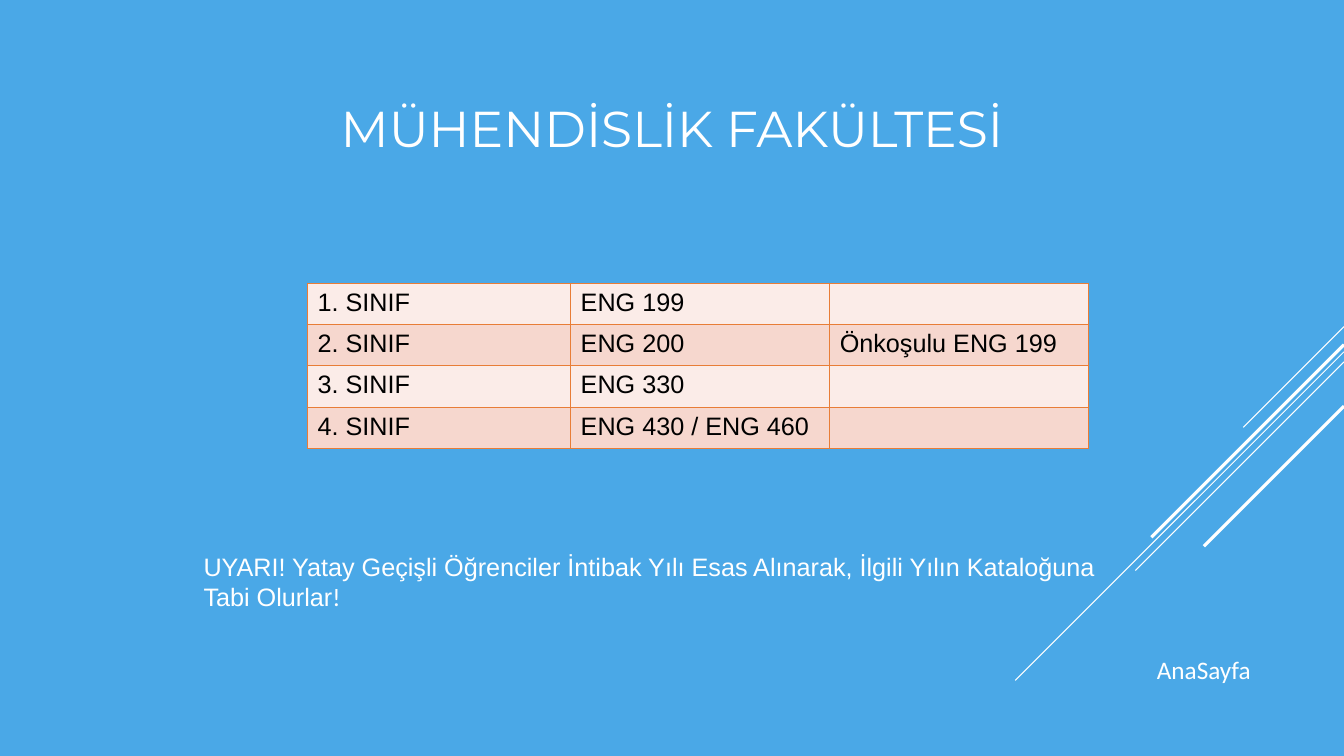
from lxml import etree
from pptx import Presentation
from pptx.dml.color import RGBColor
from pptx.enum import shapes, text
from pptx.oxml import ns
from pptx.util import Inches, Pt

BLUE = RGBColor(0x4A, 0xA8, 0xE7)
WHITE = RGBColor(0xFF, 0xFF, 0xFF)
BLACK = RGBColor(0x00, 0x00, 0x00)
ORANGE = RGBColor(0xE8, 0x7D, 0x37)
ROW_FILLS = (RGBColor(0xFB, 0xEC, 0xE8), RGBColor(0xF6, 0xD7, 0xCE))

RIGHT_EDGE = 13.33
DIAGONALS = (
    (3.24, 1.0, 0.75),
    (3.49, 3.26, 0.75),
    (3.59, 2.07, 0.75),
    (3.42, 1.91, 2.25),
    (4.03, 1.39, 2.25),
)
COURSES = (
    ("1. SINIF", "ENG 199", ""),
    ("2. SINIF", "ENG 200", "Önkoşulu ENG 199"),
    ("3. SINIF", "ENG 330", ""),
    ("4. SINIF", "ENG 430 / ENG 460", ""),
)
COLUMN_WIDTHS = (2.61, 2.57, 2.57)
ROW_HEIGHT = 0.41


def write(paragraph, content, font="Arial", size=18, color=WHITE, align=None):
    paragraph.alignment = align
    target = paragraph.add_run() if content else paragraph
    if content:
        target.text = content
    target.font.name = font
    target.font.size = Pt(size)
    target.font.color.rgb = color


def add_borders(cell, color, width):
    properties = cell._tc.get_or_add_tcPr()
    for side in ("lnL", "lnR", "lnT", "lnB"):
        line = etree.SubElement(properties, ns.qn(f"a:{side}"), w=str(Pt(width)))
        fill = etree.SubElement(line, ns.qn("a:solidFill"))
        etree.SubElement(fill, ns.qn("a:srgbClr"), val=str(color))


class SlideBuilder:
    def __init__(self, slide, background):
        self.slide = slide
        slide.background.fill.solid()
        slide.background.fill.fore_color.rgb = background

    def diagonal(self, top, reach, width):
        connector = self.slide.shapes.add_connector(
            shapes.MSO_CONNECTOR.STRAIGHT,
            Inches(RIGHT_EDGE), Inches(top),
            Inches(RIGHT_EDGE - reach), Inches(top + reach),
        )
        connector.line.color.rgb = WHITE
        connector.line.width = Pt(width)
        etree.SubElement(connector._element.spPr, ns.qn("a:effectLst"))

    def text_box(self, left, top, width, height, anchor=text.MSO_ANCHOR.TOP):
        box = self.slide.shapes.add_textbox(
            Inches(left), Inches(top), Inches(width), Inches(height)
        )
        box.text_frame.word_wrap = True
        box.text_frame.vertical_anchor = anchor
        return box.text_frame.paragraphs[0]

    def table(self, left, top, rows, widths, row_height):
        table = self.slide.shapes.add_table(
            len(rows), len(widths), Inches(left), Inches(top),
            Inches(sum(widths)), Inches(row_height * len(rows)),
        ).table
        for column, width in zip(table.columns, widths):
            column.width = Inches(width)
        for row_index, row in enumerate(rows):
            for column_index, content in enumerate(row):
                cell = table.cell(row_index, column_index)
                add_borders(cell, ORANGE, 1)
                cell.fill.solid()
                cell.fill.fore_color.rgb = ROW_FILLS[row_index % 2]
                write(cell.text_frame.paragraphs[0], content, color=BLACK)


def main():
    presentation = Presentation()
    presentation.slide_width = Inches(13.33)
    presentation.slide_height = Inches(7.5)
    slide = presentation.slides.add_slide(presentation.slide_layouts[6])
    builder = SlideBuilder(slide, BLUE)

    for top, reach, width in DIAGONALS:
        builder.diagonal(top, reach, width)

    warning = builder.text_box(1.92, 5.42, 9.49, 0.71)
    write(
        warning,
        "UYARI! Yatay Geçişli Öğrenciler İntibak Yılı Esas Alınarak, "
        "İlgili Yılın Kataloğuna Tabi Olurlar",
    )
    write(warning, "!", font="Calibri")

    title = builder.text_box(1.25, 0.68, 10.83, 1.16, text.MSO_ANCHOR.MIDDLE)
    write(title, "MÜHENDİSLİK FAKÜLTESİ", font="Montserrat", size=36,
          align=text.PP_ALIGN.CENTER)

    builder.table(3.05, 2.81, COURSES, COLUMN_WIDTHS, ROW_HEIGHT)

    home = builder.text_box(11.31, 6.44, 1.26, 0.4)
    write(home, "AnaSayfa", font="Calibri", align=text.PP_ALIGN.CENTER)

    presentation.save("out.pptx")


if __name__ == "__main__":
    main()
